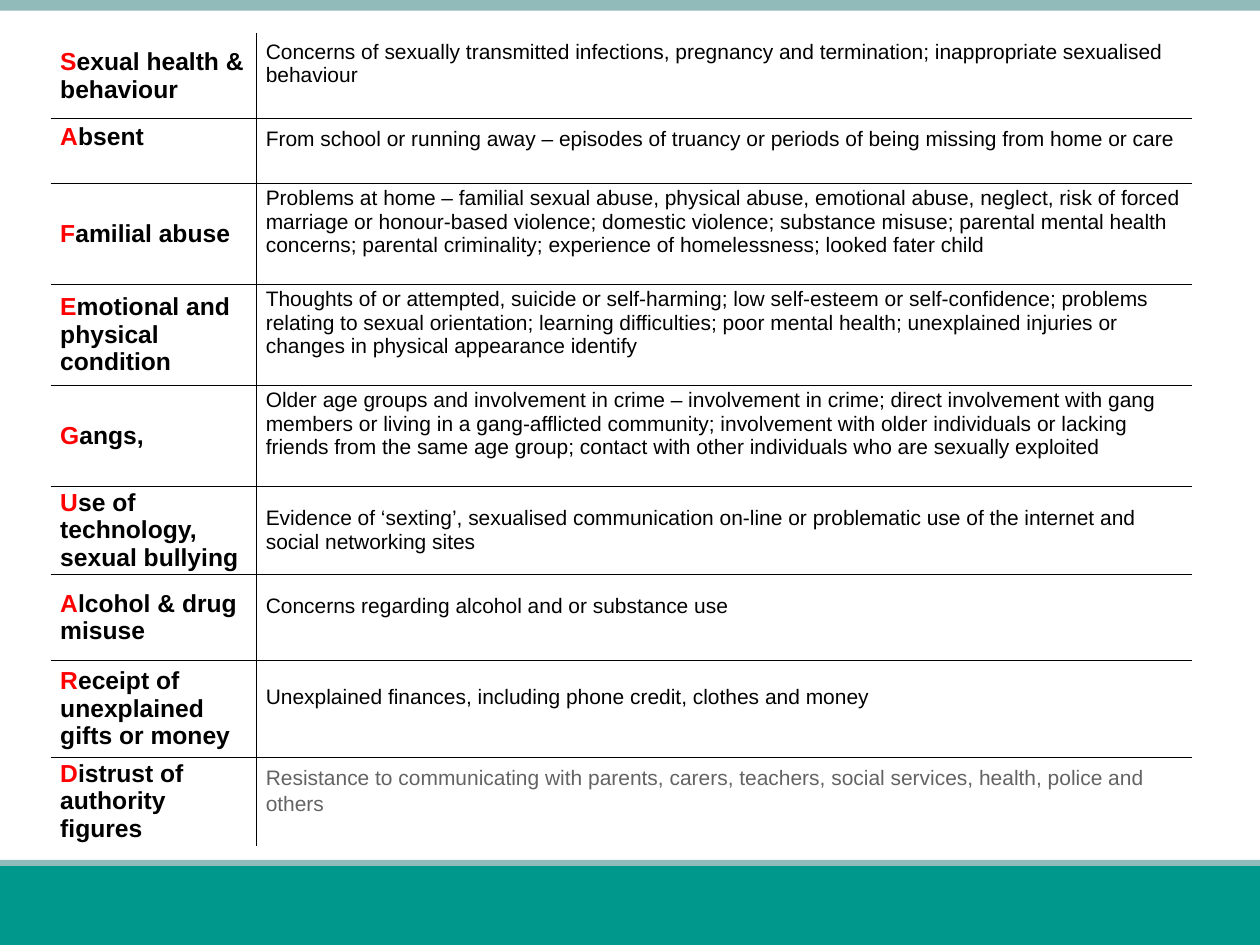
from lxml.etree import SubElement
from pptx import Presentation
from pptx.dml.color import RGBColor
from pptx.enum.shapes import MSO_SHAPE
from pptx.enum.text import MSO_ANCHOR
from pptx.oxml.ns import qn
from pptx.util import Inches, Pt

COLORS = {
    "black": "000000",
    "red": "FF0000",
    "gray": "636363",
    "pale teal": "90BBBA",
    "teal": "00988D",
}
FORMATS = {
    "initial": {"size": Pt(20), "bold": True, "color": "red"},
    "label": {"size": Pt(20), "bold": True, "color": "black"},
    "detail": {"size": Pt(17), "bold": False, "color": "black"},
    "muted": {"size": Pt(17), "bold": False, "color": "gray"},
}
NO_STYLE = "{2D5ABB26-0587-4C30-8999-92F81FD0307C}"
LABEL_LINE = 0.32
DETAIL_LINE = 0.27
COLUMN_WIDTHS = (2.32, 10.56)
ROW_HEIGHTS = (0.97, 0.73, 1.14, 1.14, 1.14, 1, 0.97, 1.09, 1)
WARNING_SIGNS = [
    ("Sexual health & behaviour",
     "Concerns of sexually transmitted infections, pregnancy and termination; "
     "inappropriate sexualised behaviour"),
    ("Absent",
     "From school or running away – episodes of truancy or periods of being "
     "missing from home or care"),
    ("Familial abuse",
     "Problems at home – familial sexual abuse, physical abuse, emotional abuse, "
     "neglect, risk of forced marriage or honour-based violence; domestic violence; "
     "substance misuse; parental mental health concerns; parental criminality; "
     "experience of homelessness; looked fater child"),
    ("Emotional and physical condition",
     "Thoughts of or attempted, suicide or self-harming; low self-esteem or "
     "self-confidence; problems relating to sexual orientation; learning "
     "difficulties; poor mental health; unexplained injuries or changes in "
     "physical appearance identify"),
    ("Gangs,",
     "Older age groups and involvement in crime – involvement in crime; direct "
     "involvement with gang members or living in a gang-afflicted community; "
     "involvement with older individuals or lacking friends from the same age "
     "group; contact with other individuals who are sexually exploited"),
    ("Use of technology, sexual bullying",
     "Evidence of ‘sexting’, sexualised communication on-line or problematic use "
     "of the internet and social networking sites"),
    ("Alcohol & drug misuse",
     "Concerns regarding alcohol and or substance use"),
    ("Receipt of unexplained gifts or money",
     "Unexplained finances, including phone credit, clothes and money"),
    ("Distrust of authority figures",
     "Resistance to communicating with parents, carers, teachers, social services, "
     "health, police and others"),
]


class SlideBuilder:
    """Hold the style and the current slide."""

    def __init__(self, slide, font_name):
        """Keep the slide and its font."""
        self.slide = slide
        self.font_name = font_name

    def add_bar(self, top, width, height, color):
        """Add a plain coloured bar from the left edge."""
        shape = self.slide.shapes.add_shape(
            MSO_SHAPE.RECTANGLE, 0, Inches(top), Inches(width), Inches(height))
        shape.shadow.inherit = False
        shape.fill.solid()
        shape.fill.fore_color.rgb = RGBColor.from_string(COLORS[color])
        shape.line.fill.background()

    def add_table(self, left, top, widths, heights):
        """Add an unstyled table and return it."""
        frame = self.slide.shapes.add_table(
            len(heights), len(widths), Inches(left), Inches(top),
            Inches(sum(widths)), Inches(sum(heights)))
        table = frame.table
        table.first_row = table.horz_banding = False
        table._tbl.tblPr.find(qn("a:tableStyleId")).text = NO_STYLE
        for column, width in zip(table.columns, widths):
            column.width = Inches(width)
        for row, height in zip(table.rows, heights):
            row.height = Inches(height)
        return table

    def add_border(self, cell, side):
        """Draw one black edge of a cell."""
        line = SubElement(cell._tc.get_or_add_tcPr(), qn(f"a:ln{side}"), w=str(Pt(1)))
        fill = SubElement(line, qn("a:solidFill"))
        SubElement(fill, qn("a:srgbClr"), val=COLORS["black"])

    def fill_cell(self, cell, runs, sides, bottom=0, line_spacing=1.0):
        """Write formatted runs into a cell and draw its edges."""
        for side in sides:
            self.add_border(cell, side)
        cell.fill.background()
        layout = {
            "vertical_anchor": MSO_ANCHOR.MIDDLE,
            "margin_left": Inches(0.11),
            "margin_right": Inches(0.11),
            "margin_top": 0,
            "margin_bottom": Inches(bottom),
        }
        for name, value in layout.items():
            setattr(cell, name, value)
        paragraph = cell.text_frame.paragraphs[0]
        paragraph.line_spacing = line_spacing
        for text, style in runs:
            run = paragraph.add_run()
            run.text = text
            self.format_font(run.font, FORMATS[style])

    def format_font(self, font, values):
        """Apply a dict of format values to a font."""
        font.name = self.font_name
        for name, value in values.items():
            if name == "color":
                font.color.rgb = RGBColor.from_string(COLORS[value])
            else:
                setattr(font, name, value)


def main():
    """Build the warning signs slide."""
    presentation = Presentation()
    presentation.slide_width = Inches(14.22)
    presentation.slide_height = Inches(10.67)
    slide = presentation.slides.add_slide(presentation.slide_layouts[6])
    builder = SlideBuilder(slide, "Arial")

    builder.add_bar(0, 14.22, 0.12, "pale teal")
    builder.add_bar(9.71, 14.22, 0.96, "pale teal")
    builder.add_bar(9.78, 14.22, 0.89, "teal")

    table = builder.add_table(0.57, 0.37, COLUMN_WIDTHS, ROW_HEIGHTS)
    last = len(WARNING_SIGNS) - 1
    for index, (label, detail) in enumerate(WARNING_SIGNS):
        edges = ("T" if index > 0 else "") + ("B" if index < last else "")
        builder.fill_cell(
            table.cell(index, 0),
            [(label[0], "initial"), (label[1:], "label")],
            "R" + edges,
            bottom=LABEL_LINE if label == "Absent" else 0)
        builder.fill_cell(
            table.cell(index, 1),
            [(detail, "muted" if index == last else "detail")],
            "L" + edges,
            bottom=0 if label.startswith("Use of") else DETAIL_LINE,
            line_spacing=1.15 if index == last else 1.0)

    presentation.save("out.pptx")


if __name__ == "__main__":
    main()
